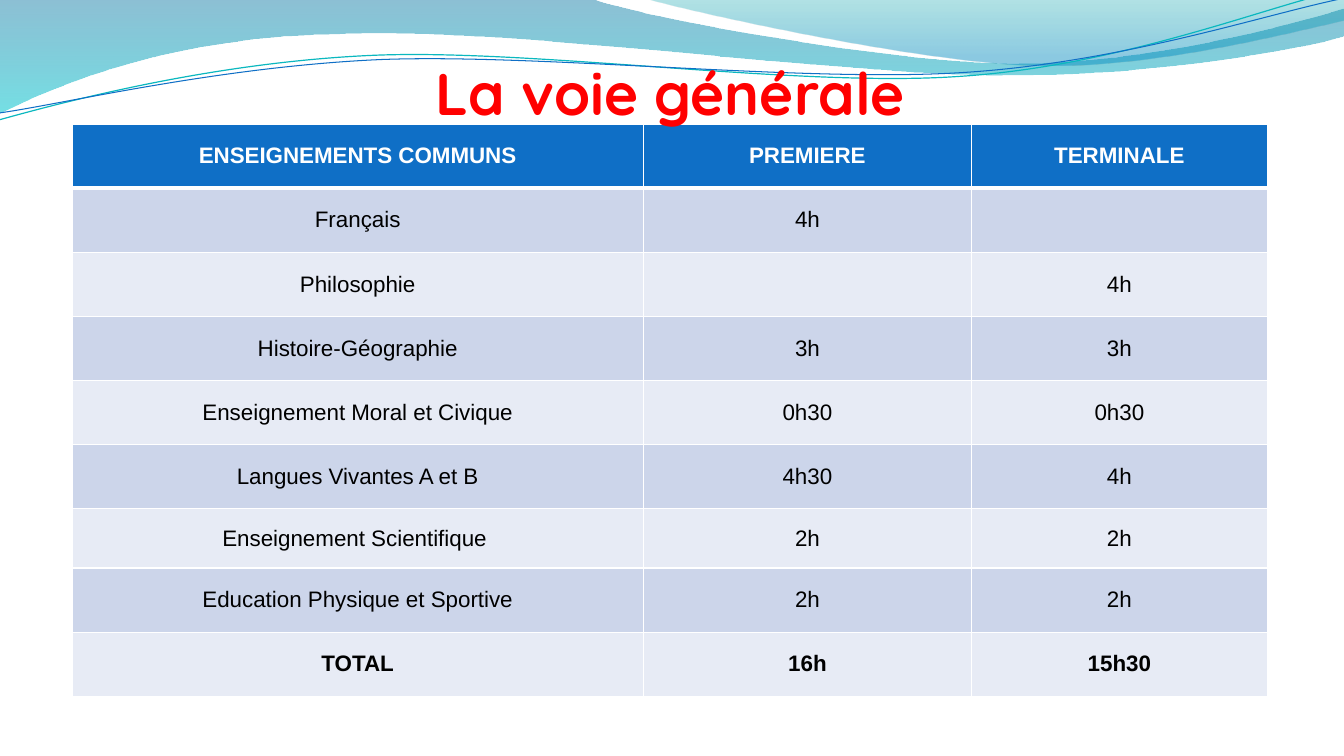
from dataclasses import dataclass
from math import cos, radians, sin

from lxml import etree
from pptx import Presentation
from pptx.dml.color import RGBColor
from pptx.enum.text import MSO_ANCHOR, MSO_AUTO_SIZE, PP_ALIGN
from pptx.oxml.ns import qn
from pptx.util import Pt

CENTER, MIDDLE, BOTTOM = PP_ALIGN.CENTER, MSO_ANCHOR.MIDDLE, MSO_ANCHOR.BOTTOM
NO_AUTOFIT = MSO_AUTO_SIZE.NONE

# Content
TITLE = "La voie générale"
ROWS = [
    ("ENSEIGNEMENTS COMMUNS", "PREMIERE", "TERMINALE"),
    ("Français", "4h", ""),
    ("Philosophie", "", "4h"),
    ("Histoire-Géographie", "3h", "3h"),
    ("Enseignement Moral et Civique", "0h30", "0h30"),
    ("Langues Vivantes A et B", "4h30", "4h"),
    ("Enseignement Scientifique ", "2h", "2h"),
    ("Education Physique et Sportive", "2h", "2h"),
    ("TOTAL", "16h", "15h30"),
]
COL_WIDTHS = (408.2, 234.3, 211.4)
ROW_HEIGHT, SCIENCE_HEIGHT, SCIENCE_ROW = 45.8, 42.5, 6
TABLE_LEFT, TABLE_TOP = 51.4, 88.6

# Waves: a start, then segments of one point (line) or three points (Bézier curve).
# Band stops are (position, colour, opacity in percent).
BANDS = [
    ((-0.7, 0),
     [[(422.6, -0.7)],
      [(456.5, 12.2), (637.2, 45.4), (727.9, 45.4)],
      [(819.4, 45.4), (920.2, 18.7), (959.8, 6.5)],
      [(961.2, 25.9)],
      [(943.9, 31.7), (835.2, 54.7), (715.7, 54)],
      [(596.9, 54), (366.5, 20.2), (247, 24.5)],
      [(123.1, 25.9), (43.9, 59.8), (-0.7, 81.4)]],
     [(0, "0074A1", 45), (1, "00C6CF", 55)]),
    ((460.1, -0.7),
     [[(488.9, 7.9), (654.5, 44.6), (738, 46.8)],
      [(821.5, 49.7), (923, 23), (959.8, 15.1)],
      [(959.8, 0)]],
     [(0, "00A1A9", 30), (0.8, "008BBF", 45)]),
]
WAVE_LINES = [
    ((-0.7, 85.7),
     [[(46.1, 72.7), (151.9, 44.6), (265.7, 39.6)],
      [(379.4, 34.6), (568.8, 62.6), (684, 54.7)],
      [(799.2, 47.5), (901.4, 5.8), (958.3, -7.2)]],
     "0AB8BF", 0.85),
    ((0, 80.6),
     [[(45.4, 74.2), (157, 47.5), (272.2, 42.5)],
      [(386.6, 38.2), (573.1, 59), (687.6, 51.8)],
      [(802.8, 44.6), (903.6, 10.1), (960.5, -1.4)]],
     "0F6FC6", 0.75),
]
LINE_TILT, LINE_PIVOT = -2.7, (479.5, 42)


@dataclass(frozen=True)
class Theme:
    title_font: str = "Quicksand"
    body_font: str = "Arial"
    title_size: int = 42
    body_size: int = 16
    title: str = "FF0000"
    header: str = "0F6FC6"
    header_text: str = "FFFFFF"
    text: str = "000000"
    odd_row: str = "CCD5EA"
    even_row: str = "E7EBF5"
    border: str = "FFFFFF"


THEME = Theme()


def rgb(value):
    return RGBColor.from_string(value)


def style(font, name, size, color, bold):
    font.name, font.size, font.bold = name, Pt(size), bold
    font.color.rgb = rgb(color)


def untilt(point, tilt):
    a = radians(-tilt)
    dx, dy = (v - pivot for v, pivot in zip(point, LINE_PIVOT))
    return (LINE_PIVOT[0] + dx * cos(a) - dy * sin(a),
            LINE_PIVOT[1] + dx * sin(a) + dy * cos(a))


def add_outline(s, start, segments, close, tilt=0):
    points = [start] + [point for segment in segments for point in segment]
    points = [tuple(Pt(v) for v in untilt(point, tilt)) for point in points]
    builder = s.shapes.build_freeform(*points[0], scale=1.0)
    builder.add_line_segments(points[1:], close=close)
    sp = builder.convert_to_shape()
    sp.rotation = tilt
    sp.shadow.inherit = False
    # Join each group of three points into one curve
    steps = iter(list(sp._element.iter(qn("a:lnTo"))))
    for segment in segments:
        group = [next(steps) for _ in segment]
        if len(group) == 3:
            curve = etree.Element(qn("a:cubicBezTo"))
            group[0].addprevious(curve)
            for step in group:
                curve.append(step[0])
                step.getparent().remove(step)
    return sp


def add_waves(s):
    for start, segments, stops in BANDS:
        sp = add_outline(s, start, segments, True)
        sp.line.fill.background()
        sp.fill.gradient()
        sp.fill.gradient_angle = 270
        for stop, (position, color, _) in zip(sp.fill.gradient_stops, stops):
            stop.position = position
            stop.color.rgb = rgb(color)
        for clr, (_, _, opacity) in zip(sp._element.iter(qn("a:srgbClr")), stops):
            etree.SubElement(clr, qn("a:alpha"), val=str(opacity * 1000))
    for start, segments, color, width in WAVE_LINES:
        sp = add_outline(s, start, segments, False, LINE_TILT)
        sp.fill.background()
        sp.line.color.rgb = rgb(color)
        sp.line.width = Pt(width)


def set_borders(cell, widths):
    tcPr = cell._tc.get_or_add_tcPr()
    for i, (side, width) in enumerate(widths.items()):
        ln = etree.Element(qn("a:ln" + side), w=str(Pt(width)))
        fill = etree.SubElement(ln, qn("a:solidFill"))
        etree.SubElement(fill, qn("a:srgbClr"), val=THEME.border)
        tcPr.insert(i, ln)


def add_hours_table(s):
    heights = [SCIENCE_HEIGHT if i == SCIENCE_ROW else ROW_HEIGHT for i in range(len(ROWS))]
    table = s.shapes.add_table(len(ROWS), len(COL_WIDTHS), Pt(TABLE_LEFT), Pt(TABLE_TOP),
                               Pt(sum(COL_WIDTHS)), Pt(sum(heights))).table
    for column, width in zip(table.columns, COL_WIDTHS):
        column.width = Pt(width)
    for i, (row, values) in enumerate(zip(table.rows, ROWS)):
        row.height = Pt(heights[i])
        header = i == 0
        fill = THEME.header if header else THEME.odd_row if i % 2 else THEME.even_row
        color = THEME.header_text if header else THEME.text
        bold = header or i == len(ROWS) - 1
        for cell, value in zip(row.cells, values):
            cell.fill.solid()
            cell.fill.fore_color.rgb = rgb(fill)
            cell.vertical_anchor = MIDDLE
            cell.margin_left = cell.margin_right = Pt(9.4)
            cell.margin_top = cell.margin_bottom = Pt(3.6)
            set_borders(cell, {"L": 1, "R": 1, "T": 3 if i == 1 else 1, "B": 3 if header else 1})
            p = cell.text_frame.paragraphs[0]
            p.text = value
            p.alignment = CENTER
            for r in p.runs:
                style(r.font, THEME.body_font, THEME.body_size, color, bold)


def set_title(s):
    title = s.shapes.title
    title.left, title.top, title.width, title.height = Pt(-1.4), Pt(9), Pt(960), Pt(85)
    tf = title.text_frame
    tf.text = TITLE
    tf.word_wrap, tf.auto_size, tf.vertical_anchor = True, NO_AUTOFIT, BOTTOM
    p = tf.paragraphs[0]
    p.alignment, p.line_spacing = CENTER, 0.76
    style(p.runs[0].font, THEME.title_font, THEME.title_size, THEME.title, True)
    # The title lies in front of the table
    s.shapes._spTree.append(title._element)


def main():
    prs = Presentation()
    prs.slide_width, prs.slide_height = Pt(960), Pt(540)
    s = prs.slides.add_slide(prs.slide_layouts[5])
    add_waves(s)
    add_hours_table(s)
    set_title(s)
    prs.save("out.pptx")


if __name__ == "__main__":
    main()
